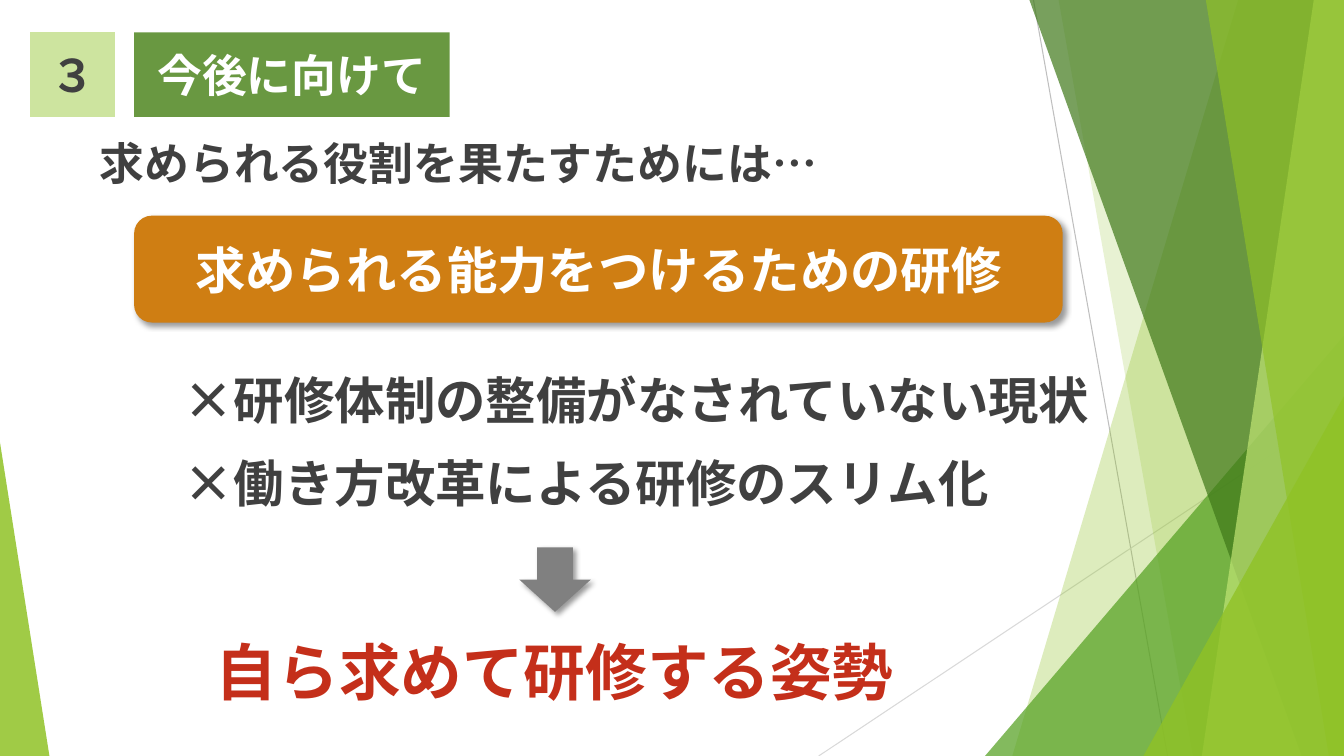
from typing import NamedTuple, Optional

from lxml import etree
from pptx import Presentation
from pptx import util as u
from pptx.dml.color import RGBColor
from pptx.enum import lang, shapes, text
from pptx.oxml import ns

FONT = "Noto Sans CJK JP"
WHITE = RGBColor(0xFF, 0xFF, 0xFF)
INK = RGBColor(0x40, 0x40, 0x40)
GRAY = RGBColor(0x80, 0x80, 0x80)
PALE_LINE = RGBColor(0xD9, 0xD9, 0xD9)
MID_LINE = RGBColor(0xBF, 0xBF, 0xBF)
LIME = RGBColor(0x90, 0xC2, 0x26)
PALE_LIME = RGBColor(0xC0, 0xE4, 0x74)
GREEN = RGBColor(0x54, 0xA0, 0x21)
DARK_GREEN = RGBColor(0x3F, 0x78, 0x19)
BADGE = RGBColor(0xCD, 0xE4, 0x9F)
TITLE_GREEN = RGBColor(0x69, 0x98, 0x41)
ORANGE = RGBColor(0xCF, 0x7E, 0x13)
RED = RGBColor(0xC4, 0x2F, 0x1A)

W, H = 13.33, 7.5
LEFT, CENTER = text.PP_ALIGN.LEFT, text.PP_ALIGN.CENTER
TOP, MIDDLE = text.MSO_ANCHOR.TOP, text.MSO_ANCHOR.MIDDLE
SHAPE = shapes.MSO_SHAPE


class Box(NamedTuple):
    x: float
    y: float
    w: float
    h: float


class Ray(NamedTuple):
    start: tuple[float, float]
    end: tuple[float, float]
    color: RGBColor


class Band(NamedTuple):
    top_x: float
    bottom_x: float
    color: RGBColor
    alpha: int


class Corner(NamedTuple):
    box: Box
    apex: int
    color: RGBColor
    alpha: int


RAYS = [
    Ray((10.25, 0), (11.58, H), MID_LINE),
    Ray((W, 4.03), (8.12, H), PALE_LINE),
]
FACETS = [
    Band(12.28, 10.04, LIME, 30),
    Band(10.5, 11.83, LIME, 20),
    Corner(Box(9.77, 3.33, 3.56, 4.17), 1, GREEN, 72),
    Band(10.21, 12.91, DARK_GREEN, 70),
    Band(13.03, 11.92, PALE_LIME, 70),
    Band(11.96, 13.18, LIME, 65),
    Corner(Box(11.34, 3.93, 1.99, 3.57), 1, LIME, 80),
    Corner(Box(0, 4.39, 0.49, 3.11), 0, LIME, 85),
]


def inches(values) -> list:
    return [u.Inches(v) for v in values]


def paint(sp, color: RGBColor, alpha: int = 100) -> None:
    sp.fill.solid()
    sp.fill.fore_color.rgb = color
    sp.line.fill.background()
    if alpha < 100:
        clr = sp.element.spPr.find(f".//{ns.qn('a:srgbClr')}")
        etree.SubElement(clr, ns.qn("a:alpha"), val=str(alpha * 1000))


def add_shadow(sp) -> None:
    effects = sp.element.spPr.find(ns.qn("a:effectLst"))
    shadow = etree.SubElement(
        effects, ns.qn("a:outerShdw"), blurRad=str(u.Pt(4)), dist=str(u.Pt(3)),
        dir=str(45 * 60000), algn="tl", rotWithShape="0")
    clr = etree.SubElement(shadow, ns.qn("a:srgbClr"), val="000000")
    etree.SubElement(clr, ns.qn("a:alpha"), val="40000")


def add_ray(s, ray: Ray) -> None:
    sp = s.shapes.add_connector(
        shapes.MSO_CONNECTOR.STRAIGHT, *inches(ray.start + ray.end))
    sp.line.color.rgb = ray.color
    sp.line.width = u.Pt(0.75)
    etree.SubElement(sp.element.spPr, ns.qn("a:effectLst"))


def add_shape(s, kind, box: Box, color: RGBColor, alpha: int = 100):
    sp = s.shapes.add_shape(kind, *inches(box))
    sp.shadow.inherit = False
    paint(sp, color, alpha)
    return sp


def add_facet(s, facet) -> None:
    if isinstance(facet, Corner):
        sp = add_shape(s, SHAPE.ISOSCELES_TRIANGLE, facet.box, facet.color, facet.alpha)
        sp.adjustments[0] = facet.apex
        return
    ff = s.shapes.build_freeform(*inches((facet.top_x, 0)))
    corners = [(W, 0), (W, H), (facet.bottom_x, H)]
    ff.add_line_segments([tuple(inches(c)) for c in corners])
    sp = ff.convert_to_shape()
    sp.shadow.inherit = False
    paint(sp, facet.color, facet.alpha)


def write(sp, *lines: str, size: int, color: RGBColor = INK, align=LEFT,
          anchor=TOP, gap: int = 0) -> None:
    tf = sp.text_frame
    tf.word_wrap = True
    tf.auto_size = text.MSO_AUTO_SIZE.NONE
    tf.vertical_anchor = anchor
    for i, line in enumerate(lines):
        p = tf.paragraphs[0] if i == 0 else tf.add_paragraph()
        p.alignment = align
        p.space_before = u.Pt(gap if i else 0)
        if sp.is_placeholder:
            pPr = p._p.get_or_add_pPr()
            pPr.set("marL", "0")
            pPr.set("indent", "0")
            etree.SubElement(pPr, ns.qn("a:buNone"))
        r = p.add_run()
        r.text = line
        r.font.size = u.Pt(size)
        r.font.bold = True
        r.font.color.rgb = color
        r.font.name = FONT
        r.font.language_id = lang.MSO_LANGUAGE_ID.JAPANESE
        latin = r.font._element.find(ns.qn("a:latin"))
        latin.addnext(etree.Element(ns.qn("a:ea"), typeface=FONT))


def place(s, sp, box: Box):
    sp.left, sp.top, sp.width, sp.height = inches(box)
    s.shapes.element.append(sp.element)
    return sp


def add_text(s, box: Box, line: str, **fmt) -> None:
    write(s.shapes.add_textbox(*inches(box)), line, **fmt)


def main() -> None:
    prs = Presentation()
    prs.slide_width, prs.slide_height = inches((W, H))
    s = prs.slides.add_slide(prs.slide_layouts[1])

    for ray in RAYS:
        add_ray(s, ray)
    for facet in FACETS:
        add_facet(s, facet)

    badge = add_shape(s, SHAPE.RECTANGLE, Box(0.3, 0.32, 0.84, 0.84), BADGE)
    write(badge, "３", size=32, align=CENTER, anchor=MIDDLE)

    title = place(s, s.shapes.title, Box(1.33, 0.32, 3.13, 0.84))
    paint(title, TITLE_GREEN)
    write(title, "今後に向けて", size=32, color=WHITE, align=CENTER, anchor=MIDDLE)

    add_text(s, Box(0.89, 1.3, 8.45, 0.64), "求められる役割を果たすためには…", size=32)

    banner = add_shape(s, SHAPE.ROUNDED_RECTANGLE, Box(1.33, 2.14, 9.21, 1.06), ORANGE)
    add_shadow(banner)
    write(banner, "求められる能力をつけるための研修", size=36, color=WHITE,
          align=CENTER, anchor=MIDDLE)

    issues = place(s, s.placeholders[1], Box(1.72, 3.61, 9.42, 1.65))
    write(issues, "×研修体制の整備がなされていない現状",
          "×働き方改革による研修のスリム化", size=36, gap=16)

    arrow = add_shape(s, SHAPE.DOWN_ARROW, Box(5.15, 5.43, 0.71, 0.64), GRAY)
    add_shadow(arrow)

    add_text(s, Box(1.67, 6.24, 7.67, 0.84), "自ら求めて研修する姿勢", size=44,
             color=RED, align=CENTER)

    prs.save("out.pptx")


if __name__ == "__main__":
    main()
